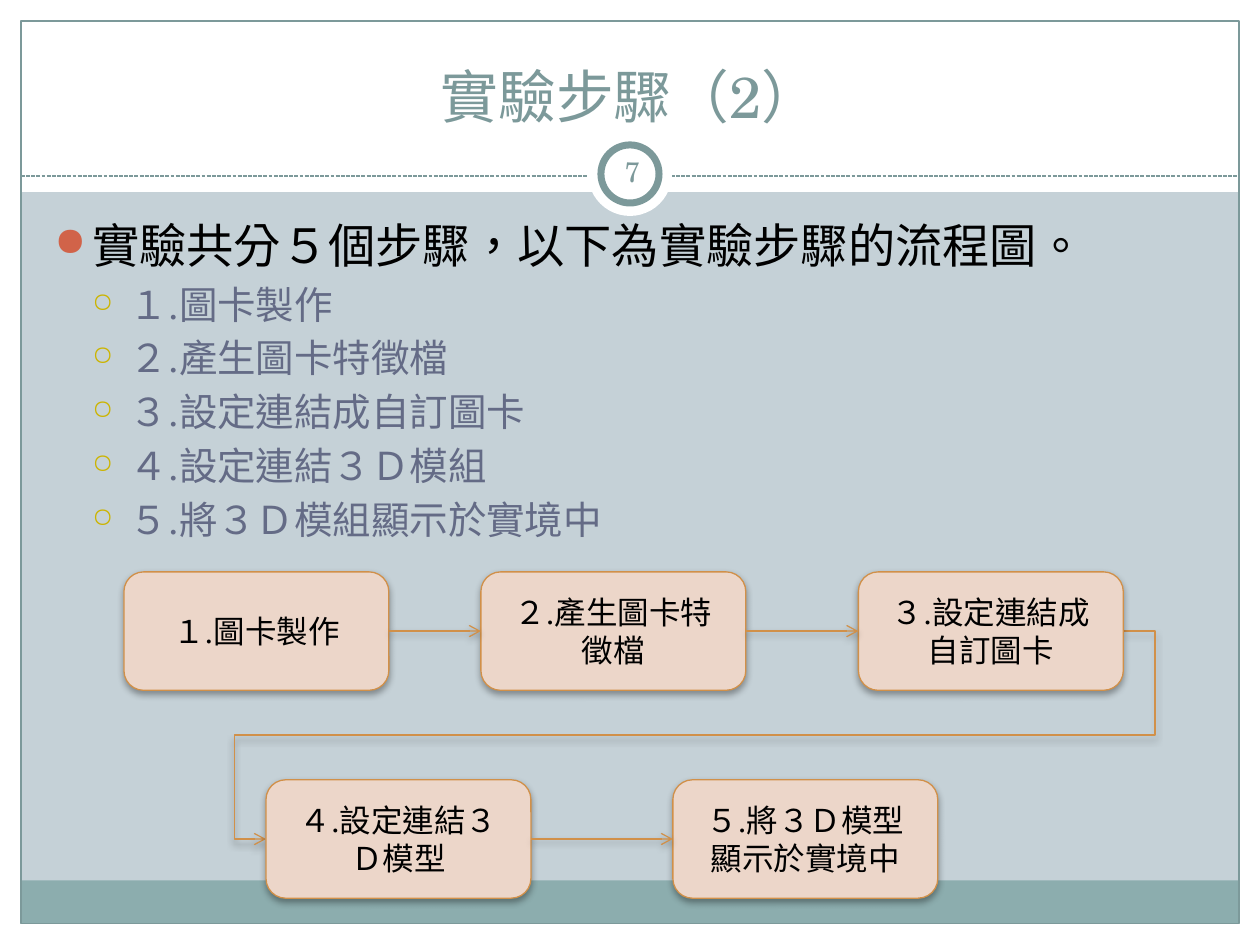
from lxml import etree
from pptx import Presentation
from pptx.dml.color import RGBColor
from pptx.enum import dml, lang, shapes, text
from pptx.oxml import ns
from pptx.util import Pt

FONT = "TeX Gyre Schola"
COLORS = {
    "back": "C5D1D7", "white": "FFFFFF", "black": "000000",
    "band": "8CADAE", "teal": "7C999A", "slate": "646B86",
    "red": "D16349", "gold": "CCB400", "box": "ECD6C9", "orange": "D19049",
}
BOX_W, BOX_H = 151.4, 67.7
ROW_1, ROW_2 = 326.8, 445.6
STEPS = [
    ("１.圖卡製作", 70.8, ROW_1),
    ("２.產生圖卡特徵檔", 274.8, ROW_1),
    ("３.設定連結成自訂圖卡", 490.5, ROW_1),
    ("４.設定連結３Ｄ模型", 152, ROW_2),
    ("５.將３Ｄ模型顯示於實境中", 384.5, ROW_2),
]
INTRO = "實驗共分５個步驟，以下為實驗步驟的流程圖。"
ITEMS = ["１.圖卡製作", "２.產生圖卡特徵檔", "３.設定連結成自訂圖卡",
         "４.設定連結３Ｄ模組", "５.將３Ｄ模組顯示於實境中"]


def rgb(name):
    return RGBColor.from_string(COLORS[name])


def add_xml(parent, tag, **attrs):
    return etree.SubElement(parent, ns.qn(tag), {k: str(v) for k, v in attrs.items()})


def add_shadow(effects):
    shadow = add_xml(effects, "a:outerShdw", blurRad=Pt(4), dist=Pt(2),
                     dir=5400000, rotWithShape=0)
    color = add_xml(shadow, "a:srgbClr", val=COLORS["black"])
    add_xml(color, "a:alpha", val=35000)


def write(p, words, size, color, align=None):
    p.add_run().text = words
    p.runs[0].font.language_id = lang.MSO_LANGUAGE_ID.TRADITIONAL_CHINESE
    p.alignment = align
    p.font.name = FONT
    p.font.size = Pt(size)
    p.font.color.rgb = rgb(color)


def add_shape(s, kind, x, y, w, h, fill=None, line=None, width=0.75):
    sp = s.shapes.add_shape(kind, Pt(x), Pt(y), Pt(w), Pt(h))
    sp.shadow.inherit = False
    if fill:
        sp.fill.solid()
        sp.fill.fore_color.rgb = rgb(fill)
    else:
        sp.fill.background()
    if line:
        sp.line.color.rgb = rgb(line)
        sp.line.width = Pt(width)
    else:
        sp.line.fill.background()
    return sp


def add_line(s, kind, x1, y1, x2, y2, color):
    line = s.shapes.add_connector(kind, Pt(x1), Pt(y1), Pt(x2), Pt(y2))
    line.line.color.rgb = rgb(color)
    line.line.width = Pt(0.75)
    effects = add_xml(line.element.spPr, "a:effectLst")
    return line, effects


def add_arrow(s, kind, x1, y1, x2, y2):
    arrow, effects = add_line(s, kind, x1, y1, x2, y2, "orange")
    add_xml(arrow.line._get_or_add_ln(), "a:tailEnd", type="arrow")
    add_shadow(effects)
    return arrow


def add_frame(s):
    rect, oval = shapes.MSO_SHAPE.RECTANGLE, shapes.MSO_SHAPE.OVAL
    for x, y, w, h in [(0, 528, 720, 12), (0, 0, 720, 109.7),
                       (0, 0, 12, 540), (708, 0, 12, 540)]:
        add_shape(s, rect, x, y, w, h, "white")
    add_shape(s, rect, 11.8, 503, 696, 24.7, "band")
    add_shape(s, rect, 12, 12, 696, 515.7, line="teal")
    rule, _ = add_line(s, shapes.MSO_CONNECTOR.STRAIGHT, 12, 100.6, 708, 100.6, "teal")
    rule.line.dash_style = dml.MSO_LINE.SQUARE_DOT
    add_shape(s, oval, 336, 75.4, 48, 48, "white")
    add_shape(s, oval, 343.4, 82.8, 33.2, 33.2, "white", "teal", 4)


def add_title(s, words):
    title = s.shapes.title
    title.element.getparent().append(title.element)
    title.left, title.top, title.width, title.height = Pt(24), Pt(18), Pt(672), Pt(60)
    tf = title.text_frame
    tf.auto_size = text.MSO_AUTO_SIZE.NONE
    tf.vertical_anchor = text.MSO_ANCHOR.BOTTOM
    write(tf.paragraphs[0], words, 33, "teal", text.PP_ALIGN.CENTER)


def add_text_box(s, x, y, w, h):
    tf = s.shapes.add_textbox(Pt(x), Pt(y), Pt(w), Pt(h)).text_frame
    tf.word_wrap = True
    return tf


def add_number(s, number):
    tf = add_text_box(s, 343.4, 80.8, 36, 34.6)
    tf.margin_left = tf.margin_right = Pt(3.6)
    tf.vertical_anchor = text.MSO_ANCHOR.MIDDLE
    write(tf.paragraphs[0], number, 16, "teal", text.PP_ALIGN.CENTER)


def add_bullet(p, char, color, percent, indent):
    pPr = p._p.get_or_add_pPr()
    pPr.set("marL", str(Pt(indent)))
    pPr.set("indent", str(-Pt(21.6)))
    add_xml(add_xml(pPr, "a:buClr"), "a:srgbClr", val=COLORS[color])
    add_xml(pPr, "a:buSzPct", val=percent * 1000)
    add_xml(pPr, "a:buChar", char=char)


def add_list(s):
    tf = add_text_box(s, 24, 120, 669.6, 360)
    p = tf.paragraphs[0]
    add_bullet(p, "●", "red", 85, 21.6)
    write(p, INTRO, 27, "black")
    for item in ITEMS:
        p = tf.add_paragraph()
        p.level = 1
        p.space_before = Pt(4.4)
        add_bullet(p, "○", "gold", 70, 43.2)
        write(p, item, 22, "slate")


def add_step(s, words, x, y):
    sp = add_shape(s, shapes.MSO_SHAPE.ROUNDED_RECTANGLE, x, y, BOX_W, BOX_H, "box", "orange")
    add_shadow(sp.element.spPr.find(ns.qn("a:effectLst")))
    tf = sp.text_frame
    tf.word_wrap = True
    tf.vertical_anchor = text.MSO_ANCHOR.MIDDLE
    write(tf.paragraphs[0], words, 18, "black", text.PP_ALIGN.CENTER)
    return sp


def add_return_arrow(s):
    x1, x2 = STEPS[2][1] + BOX_W, STEPS[3][1]
    arrow = add_arrow(s, shapes.MSO_CONNECTOR.ELBOW, x1, ROW_1 + BOX_H / 2, x2, ROW_2 + BOX_H / 2)
    geom = arrow.element.spPr.find(ns.qn("a:prstGeom"))
    geom.set("prst", "bentConnector5")
    guides = geom.find(ns.qn("a:avLst"))
    if guides is None:
        guides = add_xml(geom, "a:avLst")
    for i, value in enumerate([-3700, 50000, 103700], 1):
        add_xml(guides, "a:gd", name=f"adj{i}", fmla=f"val {value}")


def add_flow(s):
    add_return_arrow(s)
    boxes = [add_step(s, *step) for step in STEPS]
    for i, j in [(0, 1), (1, 2), (3, 4)]:
        arrow = add_arrow(s, shapes.MSO_CONNECTOR.STRAIGHT, 0, 0, 0, 0)
        arrow.begin_connect(boxes[i], 3)
        arrow.end_connect(boxes[j], 1)


def main():
    prs = Presentation()
    prs.slide_width, prs.slide_height = Pt(720), Pt(540)
    s = prs.slides.add_slide(prs.slide_layouts[5])
    s.background.fill.solid()
    s.background.fill.fore_color.rgb = rgb("back")
    add_frame(s)
    add_title(s, "實驗步驟（2）")
    add_number(s, "7")
    add_list(s)
    add_flow(s)
    prs.save("out.pptx")


if __name__ == "__main__":
    main()
